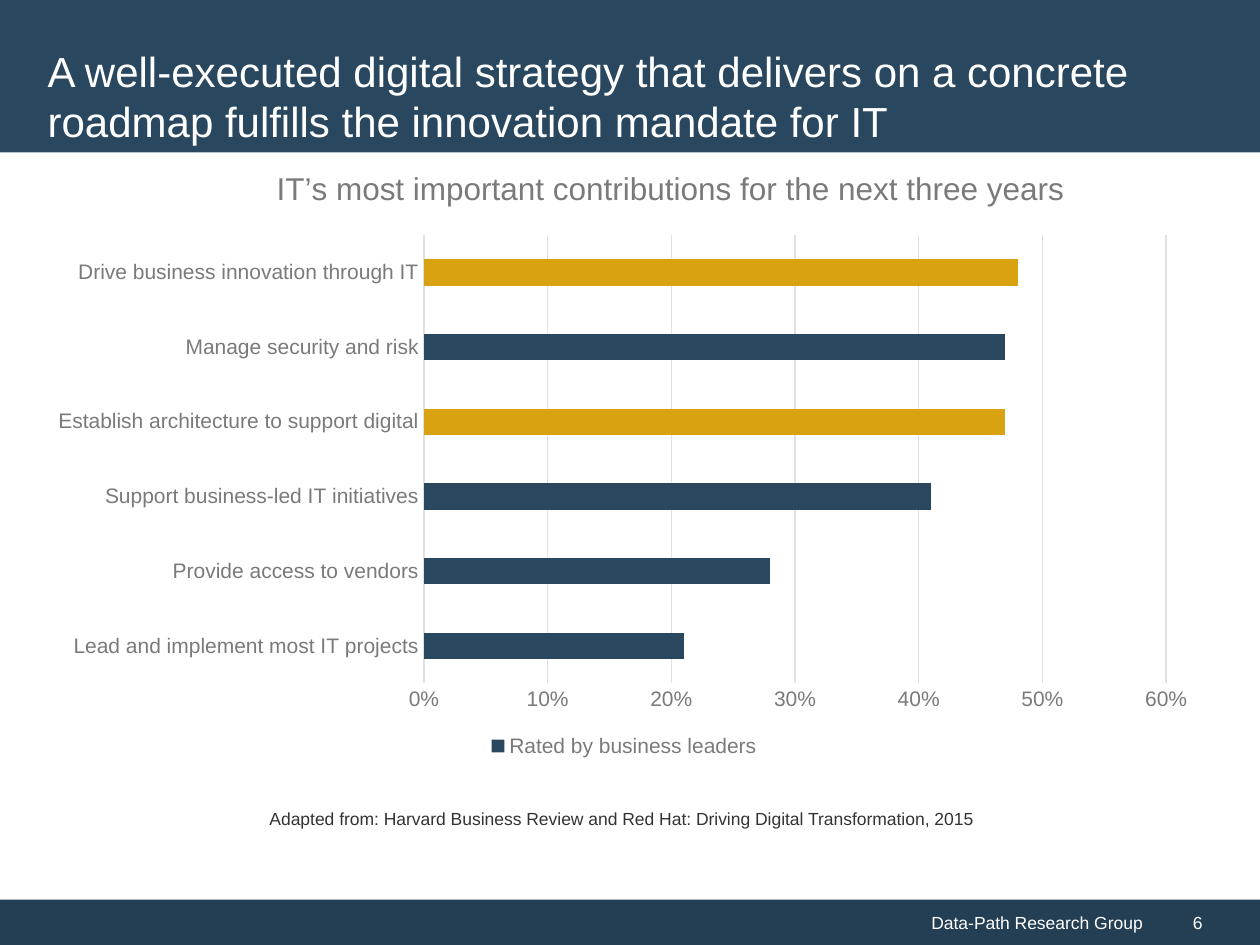
import pptx
import pptx.chart.data
import pptx.dml.color
import pptx.enum.chart
import pptx.enum.shapes
import pptx.enum.text
import pptx.oxml
import pptx.oxml.ns
import pptx.util

# Content
HEAD = ("A well-executed digital strategy that delivers on a concrete "
        "roadmap fulfills the innovation mandate for IT")
NAME = "IT’s most important contributions for the next three years"
SERIES = "Rated by business leaders"
ROWS = [  # label, share, highlighted
    ("Lead and implement most IT projects", 0.21, False),
    ("Provide access to vendors", 0.28, False),
    ("Support business-led IT initiatives", 0.41, False),
    ("Establish architecture to support digital", 0.47, True),
    ("Manage security and risk", 0.47, False),
    ("Drive business innovation through IT", 0.48, True),
]
SOURCE = ("Adapted from: Harvard Business Review and Red Hat: "
          "Driving Digital Transformation, 2015")
GROUP = "Data-Path Research Group"
PAGE = "6"

COLORS = {"navy": "29475F", "foot": "243F54", "gold": "D9A210",
          "grey": "7A7A7A", "grid": "E0E0E0", "ink": "333333",
          "white": "FFFFFF"}
FONT = "Arial"
WIDE, HIGH = 10, 7.5
FOOT = 0.36          # footer height
SPLIT = WIDE * 11 / 12  # where the page number starts
LEFT = 0.28

# Shares of the chart's own size
PLOT = {"x": 0.33, "y": 0.13, "w": 0.63, "h": 0.74}
TITLE = {"x": 0.2, "y": 0.01}

Inches, Pt = pptx.util.Inches, pptx.util.Pt
ALIGN = pptx.enum.text.PP_ALIGN
ANCHOR = pptx.enum.text.MSO_ANCHOR
CHART = pptx.enum.chart


def color(key):
    return pptx.dml.color.RGBColor.from_string(COLORS[key])


def style(font, size, key):
    font.name, font.size, font.bold = FONT, Pt(size), False
    font.color.rgb = color(key)


def write(shape, text, size, key, align=ALIGN.LEFT, anchor=ANCHOR.MIDDLE):
    frame = shape.text_frame
    frame.word_wrap = True
    frame.vertical_anchor = anchor
    para = frame.paragraphs[0]
    para.text, para.alignment = text, align
    style(para.font, size, key)
    return frame


def band(slide, box, key):
    shape = slide.shapes.add_shape(
        pptx.enum.shapes.MSO_SHAPE.RECTANGLE, *map(Inches, box))
    shape.shadow.inherit = False
    shape.fill.solid()
    shape.fill.fore_color.rgb = color(key)
    shape.line.fill.background()
    return shape


def place(node, spot, index, inner=False):
    """Give a chart part a fixed layout, in shares of the chart."""
    for old in node.findall(pptx.oxml.ns.qn("c:layout")):
        node.remove(old)
    tags = '<c:layoutTarget val="inner"/>' if inner else ""
    tags += "".join(f'<c:{k}Mode val="edge"/>' for k in "xy")
    tags += "".join(f'<c:{k} val="{v}"/>' for k, v in spot.items())
    node.insert(index, pptx.oxml.parse_xml(
        f'<c:layout {pptx.oxml.ns.nsdecls("c")}>'
        f"<c:manualLayout>{tags}</c:manualLayout></c:layout>"))


def draw(slide, box):
    data = pptx.chart.data.CategoryChartData(number_format="0%")
    data.categories = [row[0] for row in ROWS]
    data.add_series(SERIES, [row[1] for row in ROWS])
    chart = slide.shapes.add_chart(
        CHART.XL_CHART_TYPE.BAR_CLUSTERED, *map(Inches, box), data).chart
    style(chart.font, 10, "ink")

    # Title and legend
    chart.has_title = True
    para = chart.chart_title.text_frame.paragraphs[0]
    para.text = NAME
    style(para.font, 18, "grey")
    place(chart.chart_title._element, TITLE, 1)
    chart.has_legend = True
    chart.legend.position = CHART.XL_LEGEND_POSITION.BOTTOM
    chart.legend.include_in_layout = False
    style(chart.legend.font, 12, "grey")

    # Axes
    cat, val = chart.category_axis, chart.value_axis
    for axis in (cat, val):
        axis.major_tick_mark = CHART.XL_TICK_MARK.NONE
        axis.minor_tick_mark = CHART.XL_TICK_MARK.NONE
        style(axis.tick_labels.font, 12, "grey")
    val.minimum_scale, val.maximum_scale, val.major_unit = 0, 0.6, 0.1
    val.tick_labels.number_format = "0%"
    val.tick_labels.number_format_is_linked = False
    val.has_major_gridlines = True
    val.format.line.fill.background()
    for line in (cat.format.line, val.major_gridlines.format.line):
        line.color.rgb, line.width = color("grid"), Pt(0.75)

    # Bars
    plot = chart.plots[0]
    plot.gap_width, plot.vary_by_categories = 182, False
    bars = plot.series[0]
    bars.invert_if_negative = False
    bars.format.fill.solid()
    bars.format.fill.fore_color.rgb = color("navy")
    for i, row in enumerate(ROWS):
        if row[2]:
            fill = bars.points[i].format.fill
            fill.solid()
            fill.fore_color.rgb = color("gold")
    place(chart._chartSpace.xpath("c:chart/c:plotArea")[0], PLOT, 0, True)


def main():
    deck = pptx.Presentation()
    deck.slide_width, deck.slide_height = Inches(WIDE), Inches(HIGH)
    slide = deck.slides.add_slide(deck.slide_layouts[6])

    # Footer
    top = HIGH - FOOT
    foot = band(slide, (0, top, SPLIT, FOOT), "foot")
    write(foot, GROUP, 10, "white", ALIGN.RIGHT)
    page = band(slide, (SPLIT, top, WIDE - SPLIT, FOOT), "foot")
    write(page, PAGE, 10, "white").margin_left = Inches(0.3)

    # Heading
    band(slide, (0, 0, WIDE, 1.21), "navy")
    head = slide.shapes.add_textbox(*map(Inches, (LEFT, 0.28, 9.43, 0.96)))
    write(head, HEAD, 24, "white")

    # Chart and its source
    draw(slide, (LEFT, 1.24, 9.35, 4.81))
    note = slide.shapes.add_textbox(*map(Inches, (2.04, 6.36, 5.91, 0.27)))
    write(note, SOURCE, 10, "ink", anchor=ANCHOR.TOP)

    deck.save("out.pptx")


if __name__ == "__main__":
    main()
